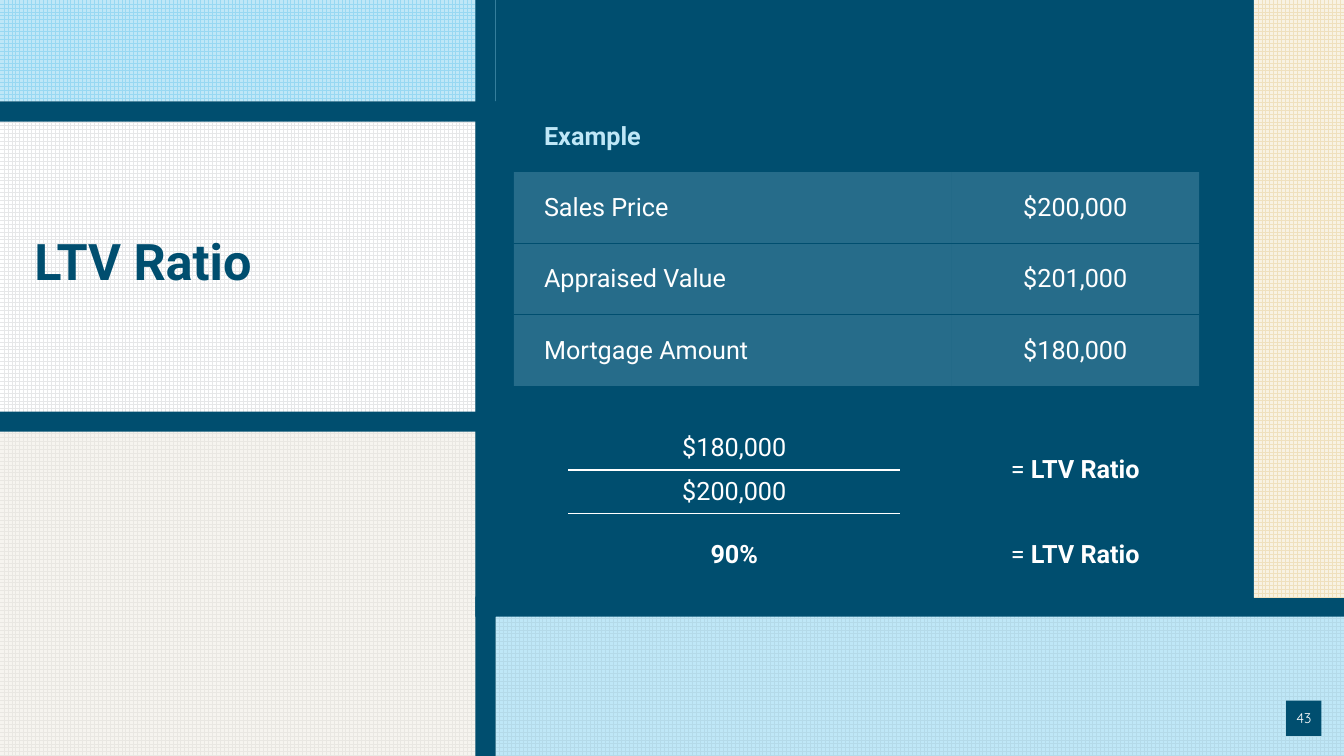
from lxml import etree
from pptx import Presentation
from pptx.dml.color import RGBColor
from pptx.enum.dml import MSO_PATTERN
from pptx.enum.shapes import MSO_SHAPE
from pptx.enum.text import MSO_ANCHOR, PP_ALIGN
from pptx.oxml.ns import qn
from pptx.util import Pt

RECT = MSO_SHAPE.RECTANGLE
GRID = MSO_PATTERN.LARGE_GRID
MIDDLE = MSO_ANCHOR.MIDDLE
LEFT, CENTER = PP_ALIGN.LEFT, PP_ALIGN.CENTER
NAVY, SKY, WHITE = "004E6F", "BFE7F7", "FFFFFF"
NO_STYLE = "{2D5ABB26-0587-4C30-8999-92F81FD0307C}"
WIDTH, HEIGHT = 960, 540
BAR = 14.4


def rgb(color):
    return RGBColor.from_string(color)


def set_pattern(fill, fore, back):
    fill.patterned()
    fill.pattern = GRID
    fill.fore_color.rgb = rgb(fore)
    fill.back_color.rgb = rgb(back)


def add_panel(s, box, fore, back=None):
    sp = s.shapes.add_shape(RECT, *map(Pt, box))
    sp.shadow.inherit = False
    sp.line.fill.background()
    if back:
        set_pattern(sp.fill, fore, back)
    else:
        sp.fill.solid()
        sp.fill.fore_color.rgb = rgb(fore)
    return sp


def write_runs(p, runs, align=LEFT, color=WHITE, size=18, name="Roboto"):
    p.alignment = align
    for text, bold in runs:
        r = p.add_run()
        r.text = text
        formats = {"name": name, "size": Pt(size), "bold": bold}
        for key, value in formats.items():
            setattr(r.font, key, value)
        r.font.color.rgb = rgb(color)


def set_frame(tf, left, top, right, bottom):
    margins = {"margin_left": left, "margin_top": top,
               "margin_right": right, "margin_bottom": bottom}
    for key, value in margins.items():
        setattr(tf, key, Pt(value))
    tf.vertical_anchor = MIDDLE


def add_backdrop(s, x, y, w, h):
    set_pattern(s.background.fill, "E6E7E8", WHITE)
    split, foot = x + 354, y + 440.6
    right, bottom = x + w, y + h
    add_panel(s, (x, y + 304, split - x, bottom - y - 304), "E9E7E2", "F6F4EF")
    add_panel(s, (split - 14, y, 556, foot - y), NAVY)
    add_panel(s, (x, y, split - x, 72.5), "98D8F2", SKY)
    add_panel(s, (split, foot - 2, right - split, bottom - foot + 2), "B4DAE9", SKY)
    add_panel(s, (split - BAR, y, BAR, h), NAVY)
    for top in (72.5, 294):
        add_panel(s, (x, y + top, split - x, BAR), NAVY)
    add_panel(s, (split - BAR, foot - BAR, right - split + BAR, BAR), NAVY)
    add_panel(s, (right - 64.3, y, 64.3, 427), "EFE0BD", "F8F2E3")


def add_title(s, x, y, w, h):
    tf = s.shapes.add_textbox(Pt(x), Pt(y), Pt(w), Pt(h)).text_frame
    tf.word_wrap = True
    set_frame(tf, 0, 3.6, 7.2, 3.6)
    p = tf.paragraphs[0]
    p.line_spacing = 0.9
    write_runs(p, [("LTV Ratio", True)], color=NAVY, size=36)


def add_border(cell, side, color):
    ln = etree.SubElement(cell._tc.get_or_add_tcPr(), qn(f"a:{side}"), w="12700")
    fill = etree.SubElement(ln, qn("a:solidFill"))
    etree.SubElement(fill, qn("a:srgbClr"), val=color)


def tint(cell):
    cell.fill.solid()
    cell.fill.fore_color.rgb = rgb(SKY)
    color = cell._tc.tcPr.find(f".//{qn('a:solidFill')}[last()]/{qn('a:srgbClr')}")
    for fill in cell._tc.tcPr.findall(qn("a:solidFill")):
        color = fill.find(qn("a:srgbClr"))
    etree.SubElement(color, qn("a:alpha"), val="20000")


def fill_cell(cell, runs, align=CENTER, left=7.2, right=7.2, color=WHITE):
    set_frame(cell, left, 3.6, right, 3.6)
    write_runs(cell.text_frame.paragraphs[0], runs, align, color)


def add_example_table(s, x, y, w, h):
    widths = [39, 237, 36.6, w - 312.6]
    heights = [50.4, 51.1, 51.1, 51.1, 28, 31, 31, h - 293.7]
    table = s.shapes.add_table(len(heights), len(widths), *map(Pt, (x, y, w, h))).table
    table.first_row = table.horz_banding = False
    table._tbl.tblPr.find(qn("a:tableStyleId")).text = NO_STYLE
    for column, width in zip(table.columns, widths):
        column.width = Pt(width)
    for row, height in zip(table.rows, heights):
        row.height = Pt(height)

    for i in range(len(heights)):
        for j in range(len(widths)):
            cell = table.cell(i, j)
            if 1 <= i <= 3:
                add_border(cell, "lnT", NAVY)
            if i <= 2:
                add_border(cell, "lnB", NAVY)
            if j == 1 and i in (5, 6):
                add_border(cell, "lnB" if i == 5 else "lnT", WHITE)
            if 1 <= i <= 3:
                tint(cell)
            else:
                cell.fill.background()

    amounts = [("Example", None), ("Sales Price", "$200,000"),
               ("Appraised Value", "$201,000"), ("Mortgage Amount", "$180,000")]
    for i, (label, amount) in enumerate(amounts):
        table.cell(i, 0).merge(table.cell(i, 2))
        fill_cell(table.cell(i, 0), [(label, i == 0)], LEFT, 21.6,
                  color=WHITE if i else SKY)
        if amount:
            fill_cell(table.cell(i, 3), [(amount, False)])

    for j in (0, 3):
        table.cell(5, j).merge(table.cell(6, j))
    for i, text in ((5, "$180,000"), (6, "$200,000"), (7, "90%")):
        fill_cell(table.cell(i, 1), [(text, i == 7)])
    for i in (5, 7):
        fill_cell(table.cell(i, 3), [("= ", False), ("LTV Ratio", True)], left=0, right=0)


def add_page_number(s, x, y, w, h):
    tf = add_panel(s, (x, y, w, h), NAVY).text_frame
    set_frame(tf, 0, 0, 0, 0)
    write_runs(tf.paragraphs[0], [("43", False)], CENTER, size=10, name="Quicksand")


def main():
    prs = Presentation()
    prs.slide_width, prs.slide_height = Pt(WIDTH), Pt(HEIGHT)
    s = prs.slides.add_slide(prs.slide_layouts[6])
    add_backdrop(s, 0, 0, WIDTH, HEIGHT)
    add_title(s, 24.5, 95, 300, 187.5)
    add_example_table(s, 367, 72.3, 489.6, 352.7)
    add_page_number(s, 918.7, 500.4, 25.2, 25.2)
    prs.save("out.pptx")


if __name__ == "__main__":
    main()
